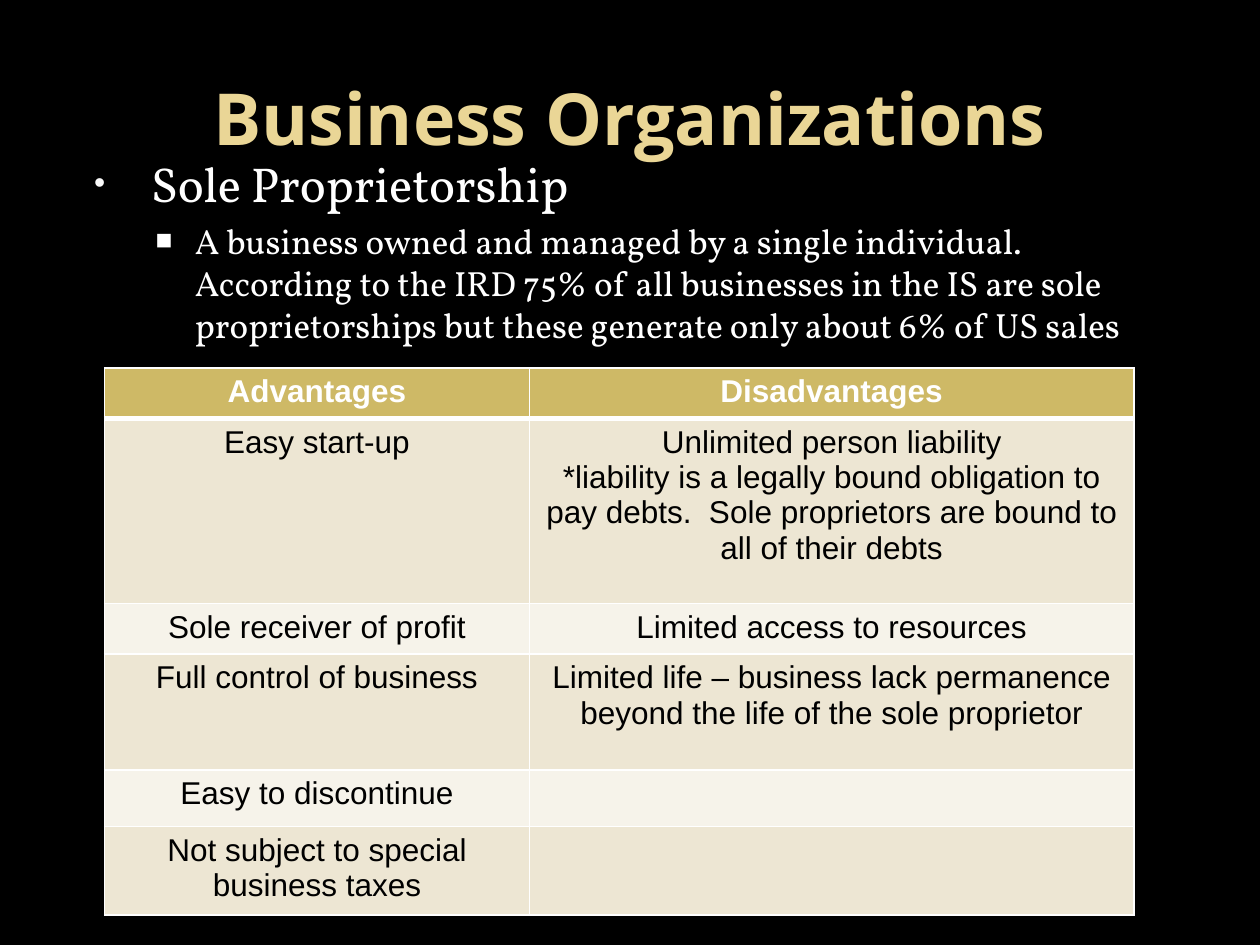
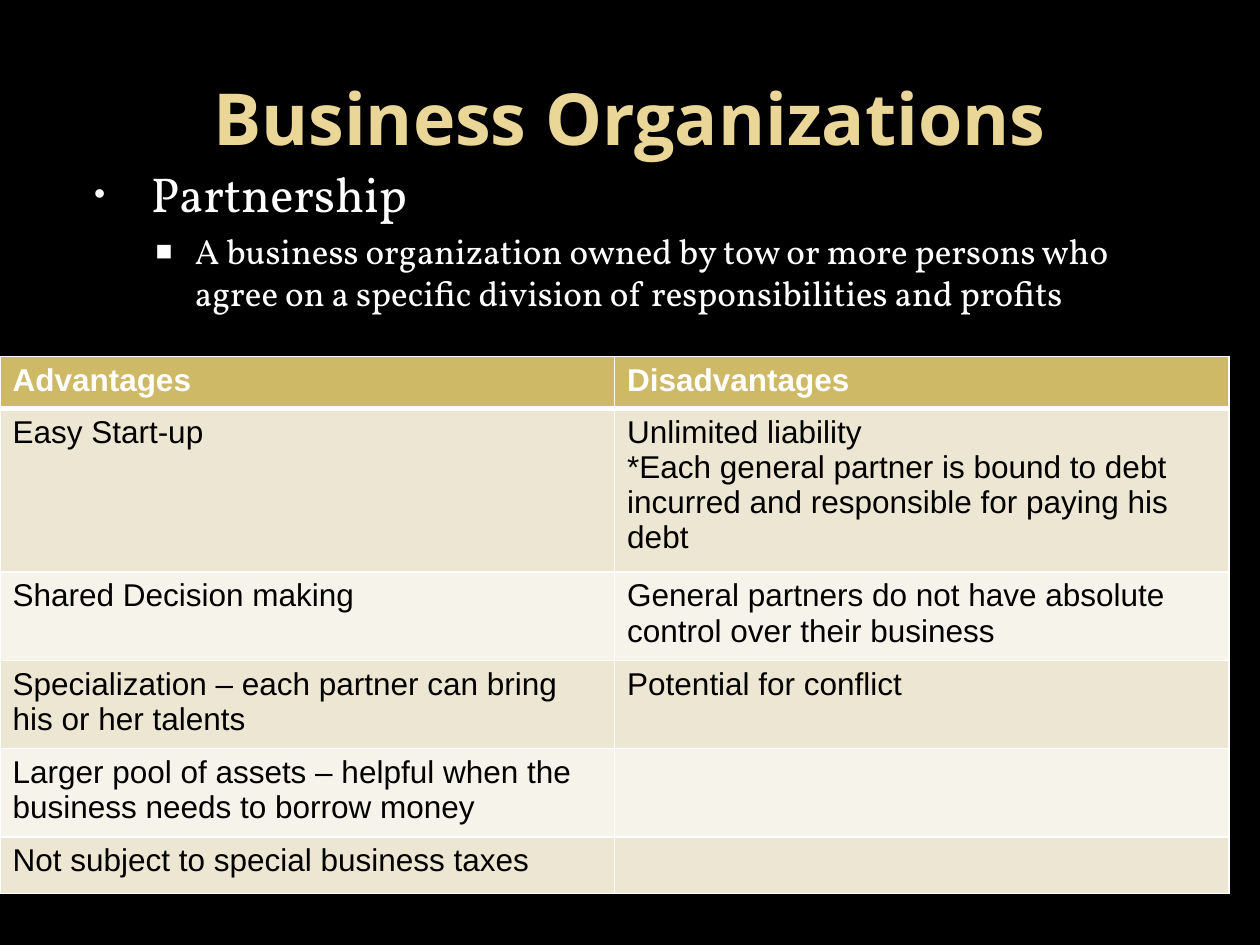
from dataclasses import dataclass

from lxml import etree
from pptx import Presentation
from pptx import util as u
from pptx.dml.color import RGBColor
from pptx.enum import text
from pptx.oxml import ns

TITLE_ONLY = 5


@dataclass(frozen=True)
class Theme:
    background: str = "000000"
    gold: str = "EAD696"
    header: str = "CEB966"
    bands: tuple = ("EDE6D3", "F6F3EA")
    light: str = "FFFFFF"
    soft_light: str = "F9F9F9"
    dark: str = "000000"
    title_font: str = "Open Sans"
    body_font: str = "Vollkorn"
    table_font: str = "Arial"
    title_size: int = 41
    topic_size: int = 28
    definition_size: int = 20
    table_size: int = 18
    rule: float = 1
    header_rule: float = 3


THEME = Theme()

TITLE_FORMAT = dict(name=THEME.title_font, size=THEME.title_size, bold=True, color=THEME.gold)
TOPIC_FORMAT = dict(name=THEME.body_font, size=THEME.topic_size, color=THEME.light)
DEFINITION_FORMAT = dict(TOPIC_FORMAT, size=THEME.definition_size)
CELL_FORMAT = dict(name=THEME.table_font, size=THEME.table_size, bold=False, color=THEME.dark)
HEADER_FORMAT = dict(CELL_FORMAT, bold=True, color=THEME.light)

TOPIC_BULLET = dict(char="•", color=THEME.soft_light, percent=65, left=1.52, hanging=1.14)
DEFINITION_BULLET = dict(char="■", color=THEME.light, percent=80, left=2.41, hanging=0.79)

# Each row pairs an advantage with a disadvantage; a line break starts a paragraph.
SOLE_PROPRIETORSHIP = [
    ("Advantages", "Disadvantages"),
    ("Easy start-up",
     "Unlimited person liability\n*liability is a legally bound obligation to pay debts.  "
     "Sole proprietors are bound to all of their debts"),
    ("Sole receiver of profit", "Limited access to resources"),
    ("Full control of business",
     "Limited life – business lack permanence beyond the life of the sole proprietor"),
    ("Easy to discontinue", ""),
    ("Not subject to special business taxes", ""),
]
PARTNERSHIP = [
    ("Advantages", "Disadvantages"),
    ("Easy Start-up",
     "Unlimited liability\n*Each general partner is bound to debt incurred and "
     "responsible for paying his debt"),
    ("Shared Decision making",
     "General partners do not have absolute control over their business"),
    ("Specialization – each partner can bring his or her talents", "Potential for conflict"),
    ("Larger pool of assets – helpful when the business needs to borrow money", ""),
    ("Not subject to special business taxes", ""),
]


def format_font(font, values):
    for key, value in values.items():
        if key == "color":
            font.color.rgb = RGBColor.from_string(value)
        else:
            setattr(font, key, u.Pt(value) if key == "size" else value)


def add_xml(parent, tag, **attributes):
    return etree.SubElement(parent, ns.qn(tag), {k: str(v) for k, v in attributes.items()})


def add_bullet(paragraph, char, color, percent, left, hanging):
    properties = paragraph._p.get_or_add_pPr()
    properties.set("marL", str(u.Cm(left)))
    properties.set("indent", str(-u.Cm(hanging)))
    add_xml(add_xml(properties, "a:buClr"), "a:srgbClr", val=color)
    add_xml(properties, "a:buSzPct", val=percent * 1000)
    add_xml(properties, "a:buFont", typeface="Arial")
    add_xml(properties, "a:buChar", char=char)


def add_organization_slide(deck):
    slide = deck.slides.add_slide(deck.slide_layouts[TITLE_ONLY])
    title = slide.shapes.title
    title.left, title.top, title.width, title.height = map(u.Cm, (1.27, 0.76, 22.86, 3.18))
    frame = title.text_frame
    frame.text = "Business Organizations"
    frame.vertical_anchor = text.MSO_ANCHOR.MIDDLE
    frame.auto_size = text.MSO_AUTO_SIZE.NONE
    frame.paragraphs[0].alignment = text.PP_ALIGN.CENTER
    format_font(frame.paragraphs[0].runs[0].font, TITLE_FORMAT)
    return slide


def add_definition(slide, top, topic, definition):
    box = slide.shapes.add_textbox(*map(u.Cm, (1.27, top, 22.86, 4)))
    frame = box.text_frame
    frame.word_wrap = True
    frame.text = f"{topic}\n{definition}"
    frame.paragraphs[1].level = 1
    styles = ((TOPIC_FORMAT, TOPIC_BULLET), (DEFINITION_FORMAT, DEFINITION_BULLET))
    for paragraph, (font_format, bullet) in zip(frame.paragraphs, styles):
        paragraph.space_before = u.Pt(0.2 * font_format["size"])
        add_bullet(paragraph, **bullet)
        format_font(paragraph.runs[0].font, font_format)


def add_borders(cell, top, bottom):
    properties = cell._tc.get_or_add_tcPr()
    widths = {"a:lnL": THEME.rule, "a:lnR": THEME.rule, "a:lnT": top, "a:lnB": bottom}
    for tag, width in widths.items():
        line = add_xml(properties, tag, w=u.Pt(width))
        add_xml(add_xml(line, "a:solidFill"), "a:srgbClr", val=THEME.light)


def fill_cell(cell, wording, row, alignment):
    is_header = row == 0
    add_borders(cell,
                top=THEME.header_rule if row == 1 else THEME.rule,
                bottom=THEME.header_rule if is_header else THEME.rule)
    cell.fill.solid()
    color = THEME.header if is_header else THEME.bands[(row - 1) % 2]
    cell.fill.fore_color.rgb = RGBColor.from_string(color)
    cell.text = wording
    for paragraph in cell.text_frame.paragraphs:
        paragraph.alignment = alignment
        for run in paragraph.runs:
            format_font(run.font, HEADER_FORMAT if is_header else CELL_FORMAT)


def add_comparison(slide, left, top, widths, heights, rows, alignment):
    frame = slide.shapes.add_table(len(rows), len(widths),
                                   *map(u.Cm, (left, top, sum(widths), sum(heights))))
    table = frame.table
    table.horz_banding = False
    for column, width in zip(table.columns, widths):
        column.width = u.Cm(width)
    for index, (row, height, wordings) in enumerate(zip(table.rows, heights, rows)):
        row.height = u.Cm(height)
        for cell, wording in zip(row.cells, wordings):
            fill_cell(cell, wording, index, alignment)


def main():
    deck = Presentation()
    deck.slide_width, deck.slide_height = u.Cm(25.4), u.Cm(19.05)
    backdrop = deck.slide_master.background.fill
    backdrop.solid()
    backdrop.fore_color.rgb = RGBColor.from_string(THEME.background)

    slide = add_organization_slide(deck)
    add_definition(slide, 2.97, "Sole Proprietorship",
                   "A business owned and managed by a single individual.  According to the IRD "
                   "75% of all businesses in the IS are sole proprietorships but these generate "
                   "only about 6% of US sales")
    add_comparison(slide, 2.11, 7.42, (8.56, 12.19), (0.99, 3.73, 0.99, 2.34, 1.14, 1.73),
                   SOLE_PROPRIETORSHIP, text.PP_ALIGN.CENTER)

    slide = add_organization_slide(deck)
    add_definition(slide, 3.18, "Partnership",
                   "A business organization owned by tow or more persons who agree on a specific "
                   "division of responsibilities and profits")
    add_comparison(slide, 0, 7.19, (12.39, 12.39), (1.04, 3.1, 1.68, 1.68, 1.68, 1.14),
                   PARTNERSHIP, text.PP_ALIGN.LEFT)

    deck.save("out.pptx")


if __name__ == "__main__":
    main()
